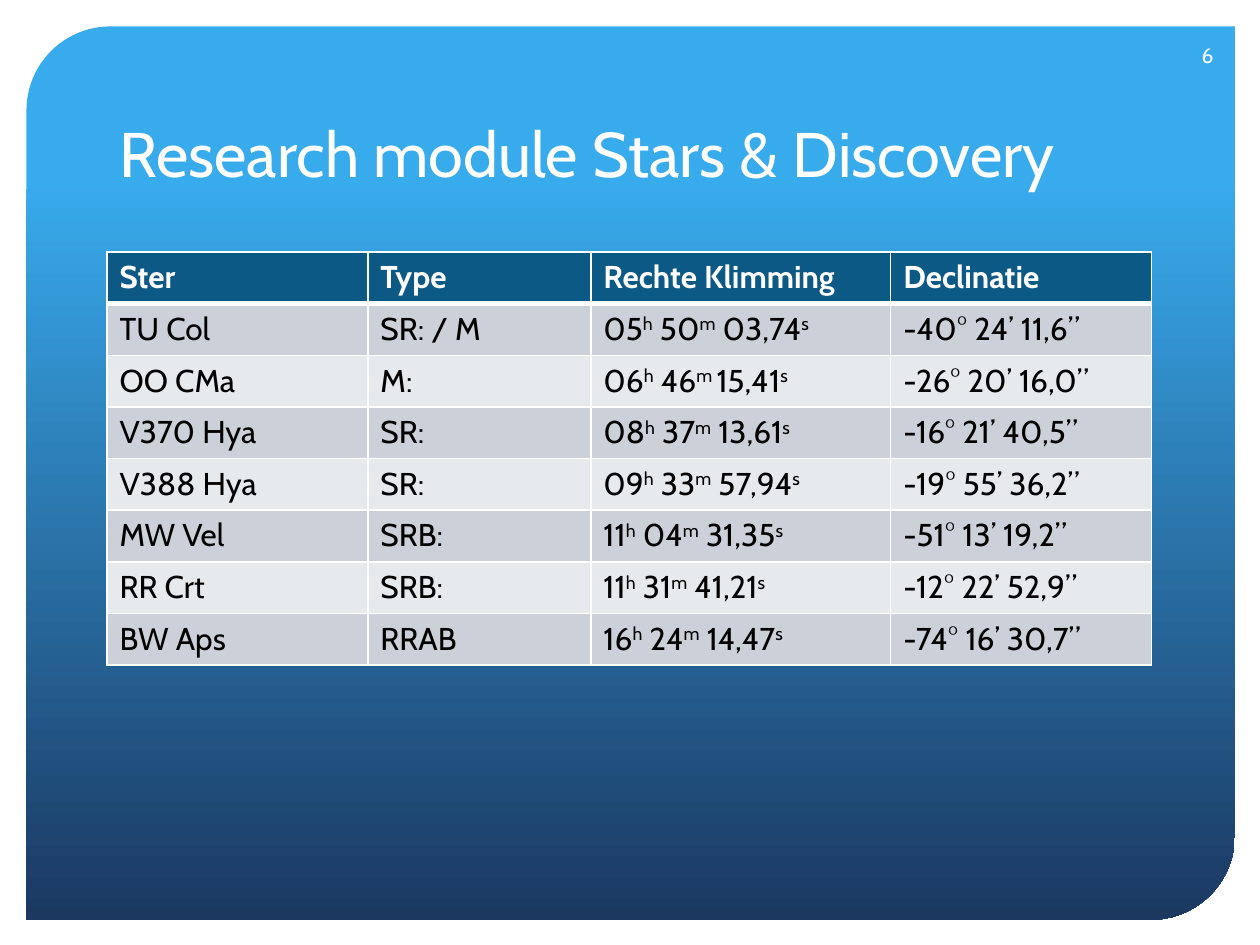
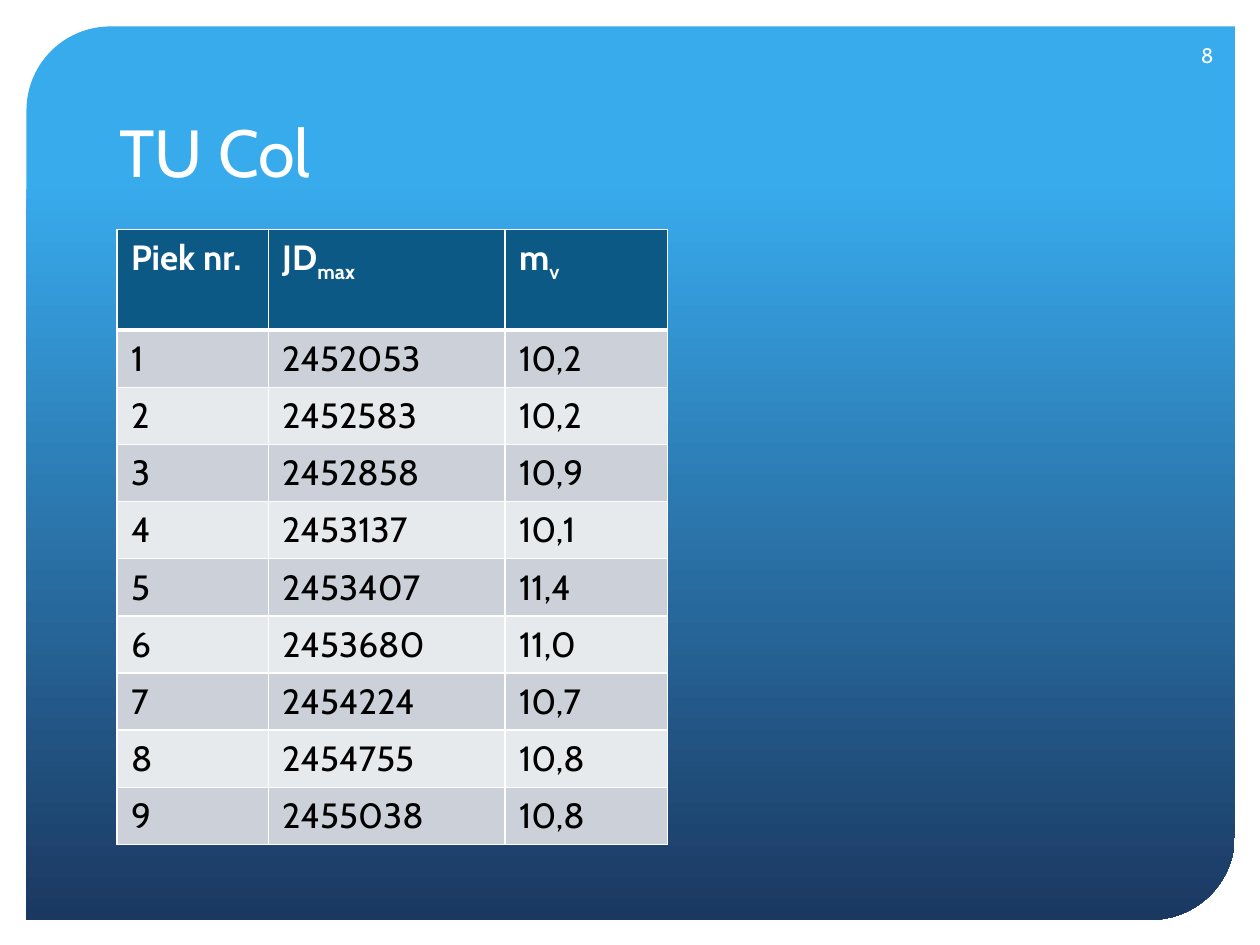
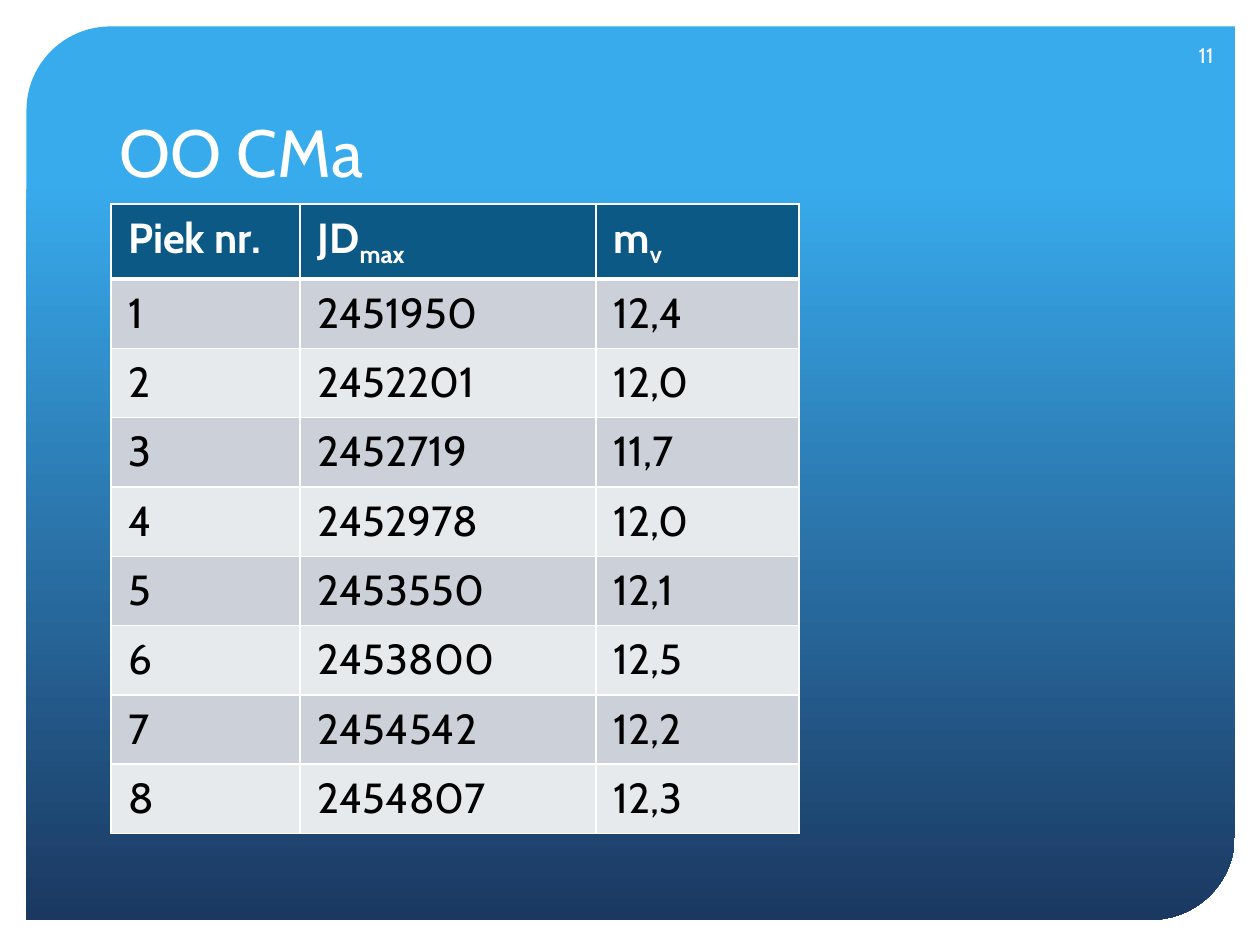
from lxml.etree import SubElement
from pptx import Presentation
from pptx.dml.color import RGBColor
from pptx.enum.shapes import MSO_SHAPE
from pptx.enum.text import MSO_ANCHOR, PP_ALIGN
from pptx.oxml.ns import qn
from pptx.util import Inches, Pt

WHITE = RGBColor(0xFF, 0xFF, 0xFF)
BLACK = RGBColor(0x00, 0x00, 0x00)
SKY = RGBColor(0x38, 0xAB, 0xED)
NIGHT = RGBColor(0x1B, 0x38, 0x61)
HEADER = RGBColor(0x0C, 0x59, 0x86)
BANDS = (RGBColor(0xCC, 0xD1, 0xD9), RGBColor(0xE7, 0xEA, 0xED))
FONT = "Cabin"
SUPERSCRIPT, SUBSCRIPT = 30, -25


def write(tf, text, size=18, color=WHITE, bold=False,
          align=PP_ALIGN.LEFT, shift=SUPERSCRIPT):
    """Write one paragraph; every second part between bars is raised or lowered."""
    p = tf.paragraphs[0]
    p.alignment = align
    for i, part in enumerate(text.split("|")):
        if not part:
            continue
        r = p.add_run()
        r.text = part
        r.font.name, r.font.size, r.font.bold = FONT, Pt(size), bold
        r.font.color.rgb = color
        if i % 2:
            r._r.get_or_add_rPr().set("baseline", str(shift * 1000))


def set_borders(cell, **widths):
    tcPr = cell._tc.get_or_add_tcPr()
    for side in "LRTB":
        ln = SubElement(tcPr, qn(f"a:ln{side}"), w=str(Pt(widths.get(side, 1))))
        fill = SubElement(ln, qn("a:solidFill"))
        SubElement(fill, qn("a:srgbClr"), val=str(WHITE))


class Deck:
    def __init__(self):
        self.prs = Presentation()
        self.prs.slide_width, self.prs.slide_height = Inches(10), Inches(7.5)
        self.s = None

    def slide(self, title, number, title_size=38):
        self.s = self.prs.slides.add_slide(self.prs.slide_layouts[6])
        self.backdrop()
        self.text(title, 0.85, 0.42, 8.29, 1.14, MSO_ANCHOR.BOTTOM, size=title_size)
        self.text(str(number), 9.19, 0.24, 0.54, 0.4, MSO_ANCHOR.MIDDLE,
                  size=12, align=PP_ALIGN.RIGHT)

    def backdrop(self):
        sp = self.s.shapes.add_shape(MSO_SHAPE.ROUND_2_DIAG_RECTANGLE, Inches(0.21),
                                     Inches(0.21), Inches(9.59), Inches(7.09))
        sp.adjustments[0], sp.adjustments[1] = 0.094, 0
        sp.shadow.inherit = False
        sp.line.fill.background()
        sp.fill.gradient()
        sp.fill.gradient_angle = 270
        for stop, position, color in zip(sp.fill.gradient_stops, (0.17, 1), (SKY, NIGHT)):
            stop.position = position
            stop.color.rgb = color

    def text(self, text, left, top, width, height, anchor, **style):
        sp = self.s.shapes.add_textbox(Inches(left), Inches(top),
                                       Inches(width), Inches(height))
        tf = sp.text_frame
        tf.word_wrap = True
        tf.vertical_anchor = anchor
        write(tf, text, **style)

    def table(self, rows, left, top, widths, row_height, header_height=None,
              size=18, margins=(0.1, 0.05), shift=SUPERSCRIPT):
        heights = [header_height or row_height] + [row_height] * (len(rows) - 1)
        table = self.s.shapes.add_table(
            len(rows), len(widths), Inches(left), Inches(top),
            Inches(sum(widths)), Inches(sum(heights))).table
        for column, width in zip(table.columns, widths):
            column.width = Inches(width)
        for i, (row, height) in enumerate(zip(rows, heights)):
            table.rows[i].height = Inches(height)
            header = i == 0
            for j, text in enumerate(row):
                cell = table.cell(i, j)
                cell.margin_left = cell.margin_right = Inches(margins[0])
                cell.margin_top = cell.margin_bottom = Inches(margins[1])
                # A thick rule divides the header from the body
                set_borders(cell, B=3 if header else 1, T=3 if i == 1 else 1)
                cell.fill.solid()
                cell.fill.fore_color.rgb = HEADER if header else BANDS[(i - 1) % 2]
                write(cell.text_frame, text, size=size, bold=header, shift=shift,
                      color=WHITE if header else BLACK)

    def peaks(self, dates, magnitudes, *place, **style):
        rows = [("Piek nr.", "JD|max", "m|v")]
        for number, (date, magnitude) in enumerate(zip(dates, magnitudes), 1):
            rows.append((str(number), str(date), magnitude))
        self.table(rows, *place, shift=SUBSCRIPT, **style)


STARS = [
    ("Ster", "Type", "Rechte Klimming", "Declinatie"),
    ("TU Col", "SR: / M", "05|h| 50|m| 03,74|s", "-40° 24’ 11,6”"),
    ("OO CMa", "M:", "06|h| 46|m |15,41|s", "-26° 20’ 16,0”"),
    ("V370 Hya", "SR:", "08|h| 37|m| 13,61|s", "-16° 21’ 40,5”"),
    ("V388 Hya", "SR:", "09|h| 33|m| 57,94|s", "-19° 55’ 36,2”"),
    ("MW Vel", "SRB:", "11|h| 04|m| 31,35|s", "-51° 13’ 19,2”"),
    ("RR Crt", "SRB:", "11|h| 31|m| 41,21|s", "-12° 22’ 52,9”"),
    ("BW Aps", "RRAB", "16|h| 24|m| 14,47|s", "-74° 16’ 30,7”"),
]


def main():
    deck = Deck()

    # Star list
    deck.slide("Research module Stars & Discovery", 6, title_size=36)
    deck.table(STARS, 0.85, 2, (2.07, 1.77, 2.38, 2.07), 0.41)

    # Peaks of TU Col
    deck.slide("TU Col", 8)
    deck.peaks((2452053, 2452583, 2452858, 2453137, 2453407,
                2453680, 2454224, 2454755, 2455038),
               ("10,2", "10,2", "10,9", "10,1", "11,4", "11,0", "10,7", "10,8", "10,8"),
               0.93, 1.82, (1.2, 1.88, 1.29), 0.45,
               header_height=0.8, size=20, margins=(0.11, 0.06))

    # Peaks of OO CMa
    deck.slide("OO CMa", 11)
    deck.peaks((2451950, 2452201, 2452719, 2452978,
                2453550, 2453800, 2454542, 2454807),
               ("12,4", "12,0", "11,7", "12,0", "12,1", "12,5", "12,2", "12,3"),
               0.88, 1.62, (1.5, 2.35, 1.61), 0.55, size=24, margins=(0.14, 0.07))

    deck.prs.save("out.pptx")


if __name__ == "__main__":
    main()
